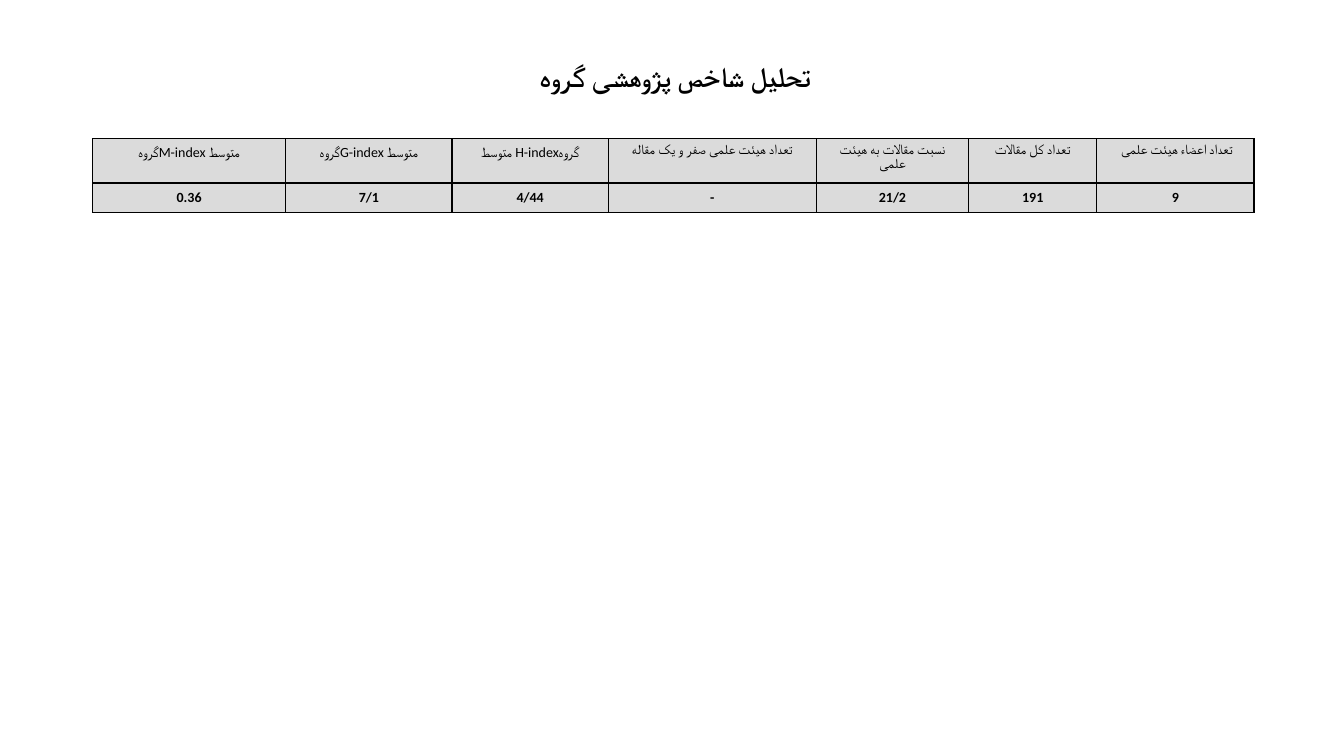
from pptx import Presentation
from pptx import util as u
from pptx.dml.color import RGBColor
from pptx.enum import text
from pptx.oxml import parse_xml
from pptx.oxml.ns import nsdecls

BORDER = ('<a:{} {} w="12700"><a:solidFill><a:srgbClr val="000000"/>'
          '</a:solidFill></a:{}>')


def rgb(value):
    return RGBColor.from_string(value)


def write(tf, words, size, bold, rtl, spacing):
    p = tf.paragraphs[0]
    p.alignment = text.PP_ALIGN.CENTER
    p.line_spacing = spacing
    p._p.get_or_add_pPr().set("rtl", "1" if rtl else "0")
    r = p.add_run()
    r.text = words
    r.font.name = "Calibri"
    r.font.size = u.Pt(size)
    r.font.bold = bold
    r.font.color.rgb = rgb("000000")
    r._r.get_or_add_rPr().append(
        parse_xml('<a:cs {} typeface="Calibri"/>'.format(nsdecls("a"))))


prs = Presentation()
prs.slide_width, prs.slide_height = u.Cm(33.87), u.Cm(19.05)
s = prs.slides.add_slide(prs.slide_layouts[5])

# Title
title = s.shapes.title
title.left, title.top = u.Cm(2.33), u.Cm(1.02)
title.width, title.height = u.Cm(29.21), u.Cm(1.9)
tf = title.text_frame
tf.vertical_anchor = text.MSO_ANCHOR.MIDDLE
write(tf, "تحلیل شاخص پژوهشی گروه ", 20, True, True, 0.9)

# Research index table: header, value, column width, right-to-left header
columns = [
    (" گروهM-index متوسط ", "0.36", 4.87, False),
    (" گروهG-index متوسط ", "7/1", 4.19, False),
    (" گروهH-index متوسط ", "4/44", 3.94, True),
    ("تعداد هیئت علمی صفر و یک مقاله", "-", 5.24, True),
    ("نسبت مقالات به هیئت علمی", "21/2", 3.84, True),
    ("تعداد کل مقالات", "191", 3.23, True),
    ("تعداد اعضاء هیئت علمی ", "9", 3.96, True),
]
tbl = s.shapes.add_table(2, len(columns), u.Cm(2.33), u.Cm(3.5),
                         u.Cm(29.27), u.Cm(1.86)).table
tbl.rows[0].height, tbl.rows[1].height = u.Cm(1.11), u.Cm(0.75)

for c, (header, value, width, rtl) in enumerate(columns):
    tbl.columns[c].width = u.Cm(width)
    # Headers without Latin letters are set tighter
    spacing = 1.0 if "index" in header else 0.8
    write(tbl.cell(0, c).text_frame, header, 10, False, rtl, spacing)
    write(tbl.cell(1, c).text_frame, value, 10, True, True, 1.0)
    tbl.cell(1, c).vertical_anchor = text.MSO_ANCHOR.MIDDLE

# Cell borders and fill
for cell in tbl.iter_cells():
    tcPr = cell._tc.get_or_add_tcPr()
    for side in ("lnL", "lnR", "lnT", "lnB"):
        tcPr.append(parse_xml(BORDER.format(side, nsdecls("a"), side)))
    cell.fill.solid()
    cell.fill.fore_color.rgb = rgb("DBDBDB")

prs.save("out.pptx")
